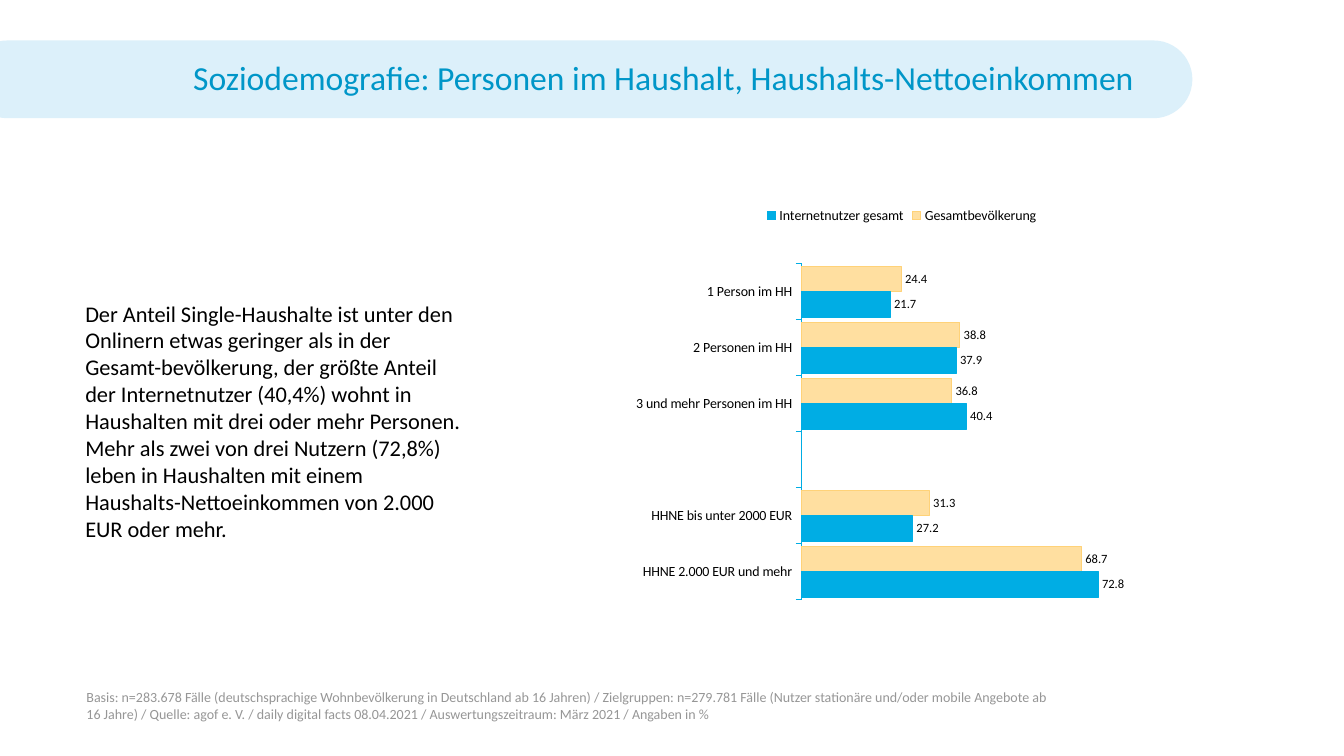
import pptx
import pptx.chart.data
import pptx.dml.color
import pptx.enum.chart
import pptx.enum.shapes
import pptx.enum.text
import pptx.oxml
import pptx.oxml.ns
import pptx.util
from pptx.util import Cm

FONT = "Calibri"
COLOURS = {
    "band": "DCF0FA",
    "title": "0096C8",
    "text": "000000",
    "footnote": "969696",
    "population": "FFD278",
    "users": "00ADE4",
}


def rgb(name):
    return pptx.dml.color.RGBColor.from_string(COLOURS[name])


def write(shape, text, size, colour, anchor):
    frame = shape.text_frame
    frame.word_wrap = True
    frame.vertical_anchor = anchor
    para = frame.paragraphs[0]
    para.text = text
    para.font.name = FONT
    para.font.size = pptx.util.Pt(size)
    para.font.color.rgb = rgb(colour)
    return para


deck = pptx.Presentation()
deck.slide_width, deck.slide_height = Cm(33.87), Cm(19.05)
page = deck.slides.add_slide(deck.slide_layouts[6])
anchors = pptx.enum.text.MSO_ANCHOR

# Title band, running in from the left edge
band = page.shapes.add_shape(
    pptx.enum.shapes.MSO_SHAPE.ROUNDED_RECTANGLE,
    Cm(-0.79), Cm(1.02), Cm(30.84), Cm(1.96))
band.adjustments[0] = 0.5
band.shadow.inherit = False
band.fill.solid()
band.fill.fore_color.rgb = rgb("band")
band.line.fill.background()
band.text_frame.margin_right = Cm(1.19)
para = write(band, "Soziodemografie: Personen im Haushalt, Haushalts-Nettoeinkommen",
             24, "title", anchors.MIDDLE)
para.alignment = pptx.enum.text.PP_ALIGN.RIGHT
para.line_spacing = 0.9

# Commentary
box = page.shapes.add_textbox(Cm(1.9), Cm(4.95), Cm(10), Cm(11.3))
write(box, "Der Anteil Single-Haushalte ist unter den Onlinern etwas geringer als in der "
      "Gesamt-bevölkerung, der größte Anteil der Internetnutzer (40,4%) wohnt in "
      "Haushalten mit drei oder mehr Personen. Mehr als zwei von drei Nutzern (72,8%) "
      "leben in Haushalten mit einem Haushalts-Nettoeinkommen von 2.000 EUR oder mehr.",
      16, "text", anchors.MIDDLE)

# Footnote
box = page.shapes.add_textbox(Cm(1.93), Cm(17.22), Cm(24.97), Cm(1.02))
write(box, "Basis: n=283.678 Fälle (deutschsprachige Wohnbevölkerung in Deutschland ab "
      "16 Jahren) / Zielgruppen: n=279.781 Fälle (Nutzer stationäre und/oder mobile "
      "Angebote ab 16 Jahre) / Quelle: agof e. V. / daily digital facts 08.04.2021 / "
      "Auswertungszeitraum: März 2021 / Angaben in %",
      10, "footnote", anchors.TOP)

# Bar chart
data = pptx.chart.data.CategoryChartData(number_format="#,##0.0")
data.categories = ["1 Person im HH", "2 Personen im HH", "3 und mehr Personen im HH",
                   "", "HHNE bis unter 2000 EUR", "HHNE 2.000 EUR und mehr"]
data.add_series("Gesamtbevölkerung", [24.4, 38.8, 36.8, None, 31.3, 68.7])
data.add_series("Internetnutzer gesamt", [21.7, 37.9, 40.4, None, 27.2, 72.8])
chart = page.shapes.add_chart(
    pptx.enum.chart.XL_CHART_TYPE.BAR_CLUSTERED,
    Cm(16.03), Cm(4.95), Cm(13.31), Cm(11.3), data).chart
chart.has_title = False
chart.font.name = FONT
chart.font.size = pptx.util.Pt(9)
chart.font.color.rgb = rgb("text")

chart.has_legend = True
chart.legend.position = pptx.enum.chart.XL_LEGEND_POSITION.TOP
chart.legend.include_in_layout = False
chart.legend.font.size = pptx.util.Pt(10)

# Axes
households = chart.category_axis
households.reverse_order = True
households.has_major_gridlines = False
households.major_tick_mark = pptx.enum.chart.XL_TICK_MARK.OUTSIDE
households.tick_labels.font.size = pptx.util.Pt(10)
households.format.line.color.rgb = rgb("users")
households.format.line.width = pptx.util.Pt(0.75)
percent = chart.value_axis
percent.minimum_scale, percent.maximum_scale = 0, 80
percent.has_major_gridlines = False
percent.visible = False

# Bars and their values
plot = chart.plots[0]
plot.gap_width = 20
plot.overlap = 0
plot.vary_by_categories = False
for series, colour in zip(plot.series, ("population", "users")):
    series.format.fill.solid()
    series.format.fill.fore_color.rgb = rgb(colour)
    series.format.line.color.rgb = rgb(colour)
    series.format.line.width = pptx.util.Pt(0.75)
    labels = series.data_labels
    labels.show_value = True
    labels.number_format = "#,##0.0"
    labels.number_format_is_linked = False
    labels.position = pptx.enum.chart.XL_LABEL_POSITION.OUTSIDE_END
    labels.font.size = pptx.util.Pt(9)

# Population bars are 70 % opaque
qn = pptx.oxml.ns.qn
tint = plot.series[0].format.fill.fore_color
fill = plot.series[0].format.fill
solid = chart.element.find(".//" + qn("c:ser") + "/" + qn("c:spPr") + "/" + qn("a:solidFill"))
solid[0].append(pptx.oxml.parse_xml(
    f'<a:alpha {pptx.oxml.ns.nsdecls("a")} val="70000"/>'))

# Fixed plot area inside the chart frame
area = chart.element.find(".//" + qn("c:plotArea"))
for layout in area.findall(qn("c:layout")):
    area.remove(layout)
area.insert(0, pptx.oxml.parse_xml(
    f'<c:layout {pptx.oxml.ns.nsdecls("c")}><c:manualLayout>'
    '<c:layoutTarget val="inner"/><c:xMode val="edge"/><c:yMode val="edge"/>'
    '<c:x val="0.31"/><c:y val="0.15"/><c:w val="0.62"/><c:h val="0.75"/>'
    '</c:manualLayout></c:layout>'))

deck.save("out.pptx")
